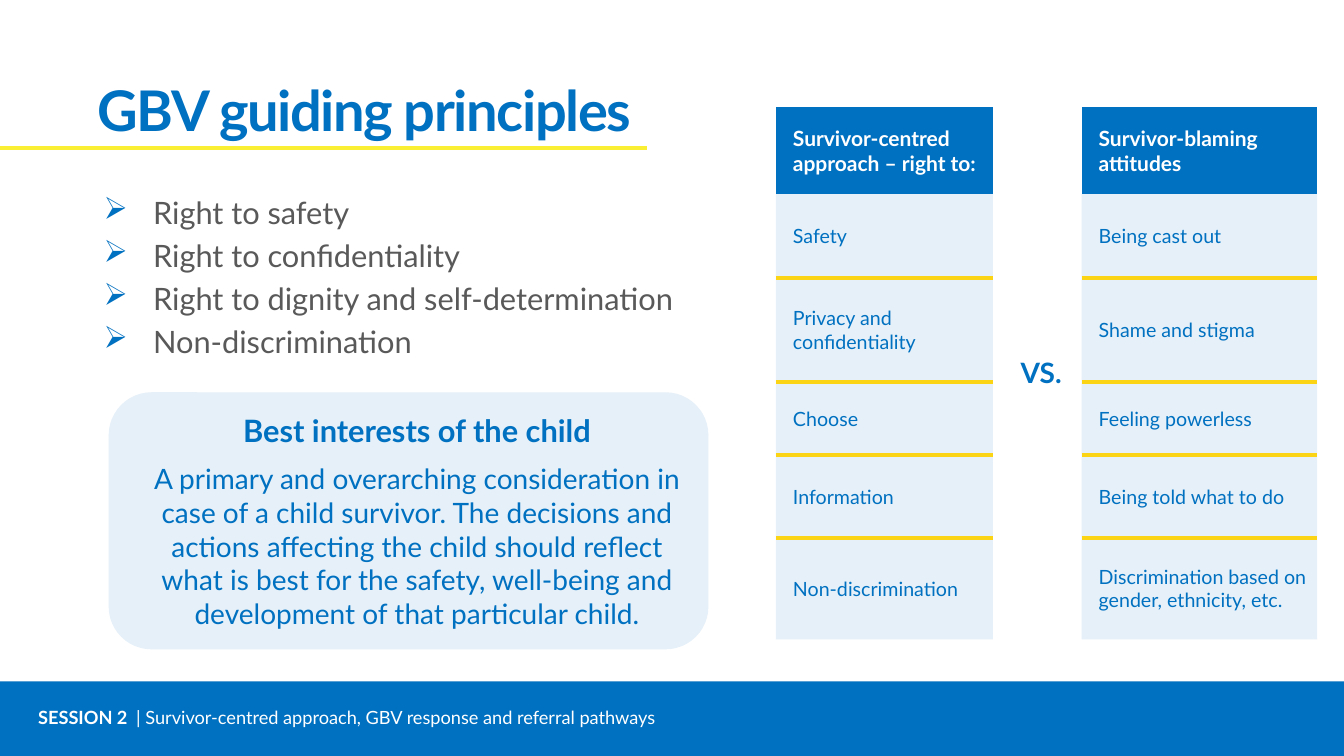
from dataclasses import dataclass
from typing import Any

from lxml.etree import SubElement
from pptx import Presentation
from pptx.dml.color import RGBColor as RGB
from pptx.enum.shapes import MSO_CONNECTOR as CONNECTOR, MSO_SHAPE as SHAPE
from pptx.enum.text import MSO_ANCHOR as ANCHOR, PP_ALIGN as ALIGN
from pptx.oxml.ns import qn
from pptx.util import Pt


@dataclass(frozen=True)
class Theme:
    font: str = "Lato"
    blue: str = "0070C0"
    grey: str = "595959"
    white: str = "FFFFFF"
    underline: str = "FBEF33"
    divider: str = "FBD416"
    tint: int = 10
    title: float = 40
    large: float = 22
    medium: float = 20
    header: float = 15
    cell: float = 14
    footer: float = 13


@dataclass(frozen=True)
class Box:
    left: float
    top: float
    width: float
    height: float

    def points(self) -> list[Pt]:
        return [Pt(v) for v in (self.left, self.top, self.width, self.height)]


@dataclass(frozen=True)
class Style:
    size: float
    color: str
    bold: bool = False


@dataclass(frozen=True)
class Contrast:
    right: str
    attitude: str
    height: float


THEME = Theme()
HEADER = Contrast("Survivor-centred approach – right to:", "Survivor-blaming attitudes", 62.4)
CONTRASTS = [
    Contrast("Safety", "Being cast out", 60),
    Contrast("Privacy and confidentiality", "Shame and stigma", 74),
    Contrast("Choose", "Feeling powerless", 52.6),
    Contrast("Information", "Being told what to do", 59),
    Contrast("Non-discrimination", "Discrimination based on gender, ethnicity, etc.", 72.4),
]
PRINCIPLES = [
    "Right to safety",
    "Right to confidentiality",
    "Right to dignity and self-determination",
    "Non-discrimination",
]
COLUMN_WIDTHS = [155, 63.4, 168.2]


def apply(target: Any, values: dict[str, Any]) -> None:
    for name, value in values.items():
        setattr(target, name, value)


def write(paragraph: Any, text: str, style: Style) -> Any:
    run = paragraph.add_run()
    run.text = text
    apply(run.font, {"name": THEME.font, "size": Pt(style.size), "bold": style.bold})
    run.font.color.rgb = RGB.from_string(style.color)
    return run


def paint(fill: Any, color: str) -> None:
    fill.solid()
    fill.fore_color.rgb = RGB.from_string(color)


def tint(properties: Any) -> None:
    color = properties.find(qn("a:solidFill")).find(qn("a:srgbClr"))
    SubElement(color, qn("a:alpha"), val=str(THEME.tint * 1000))


def add_panel(slide: Any, kind: SHAPE, box: Box) -> Any:
    panel = slide.shapes.add_shape(kind, *box.points())
    panel.shadow.inherit = False
    paint(panel.fill, THEME.blue)
    panel.line.fill.background()
    return panel


def add_title(slide: Any) -> None:
    title = slide.shapes.title
    left, top, width, height = Box(62.6, 54, 428.4, 51.8).points()
    apply(title, {"left": left, "top": top, "width": width, "height": height})
    apply(title.text_frame, {"vertical_anchor": ANCHOR.BOTTOM, "word_wrap": True})
    paragraph = title.text_frame.paragraphs[0]
    paragraph.alignment = ALIGN.LEFT
    run = write(paragraph, "GBV guiding principles", Style(THEME.title, THEME.blue, True))
    run.font._element.set("spc", "-100")

    underline = slide.shapes.add_connector(
        CONNECTOR.STRAIGHT, Pt(0), Pt(105.8), Pt(462.2), Pt(105.8))
    underline.line.color.rgb = RGB.from_string(THEME.underline)
    underline.line.width = Pt(3)
    SubElement(underline._element.spPr, qn("a:effectLst"))


def add_principles(slide: Any) -> None:
    frame = slide.shapes.add_textbox(*Box(67, 134.6, 428.4, 167).points()).text_frame
    frame.word_wrap = True
    for index, principle in enumerate(PRINCIPLES):
        paragraph = frame.add_paragraph() if index else frame.paragraphs[0]
        if index:
            paragraph.space_before = Pt(4.4)
        properties = paragraph._p.get_or_add_pPr()
        apply_indent = {"marL": Pt(35.3), "indent": -Pt(35.3)}
        for name, value in apply_indent.items():
            properties.set(name, str(int(value)))
        bullet_color = SubElement(properties, qn("a:buClr"))
        SubElement(bullet_color, qn("a:srgbClr"), val=THEME.blue)
        SubElement(properties, qn("a:buFont"), typeface="Wingdings 3")
        properties.remove(properties.find(qn("a:buFont")))
        SubElement(properties, qn("a:buChar"), char="➢")
        write(paragraph, principle, Style(THEME.large, THEME.grey))


def add_best_interests(slide: Any) -> None:
    panel = add_panel(slide, SHAPE.ROUNDED_RECTANGLE, Box(77.6, 280.2, 428.4, 183.6))
    tint(panel._element.spPr)
    frame = panel.text_frame
    apply(frame, {"word_wrap": True, "vertical_anchor": ANCHOR.MIDDLE})
    heading, explanation = frame.paragraphs[0], frame.add_paragraph()
    for paragraph in (heading, explanation):
        paragraph.alignment = ALIGN.CENTER
        paragraph._p.get_or_add_pPr().set("marL", str(int(Pt(12.2))))
    explanation.space_before = Pt(9.6)
    write(heading, "Best interests of the child", Style(THEME.large, THEME.blue, True))
    write(explanation,
          "A primary and overarching consideration in case of a child survivor. "
          "The decisions and actions affecting the child should reflect what is best for "
          "the safety, well-being and development of that particular child.",
          Style(THEME.medium, THEME.blue))


def fill_cell(cell: Any, text: str, style: Style, fill: str) -> None:
    apply(cell, {
        "vertical_anchor": ANCHOR.MIDDLE,
        "margin_left": Pt(12.2), "margin_right": Pt(6.5),
        "margin_top": Pt(3.6), "margin_bottom": Pt(3.6),
    })
    paint(cell.fill, fill)
    write(cell.text_frame.paragraphs[0], text, style)


def add_divider(cell: Any, side: str) -> None:
    properties = cell._tc.get_or_add_tcPr()
    line = SubElement(properties, qn(f"a:{side}"), w=str(int(Pt(3))))
    SubElement(SubElement(line, qn("a:solidFill")), qn("a:srgbClr"), val=THEME.divider)
    # Borders come before the fill, top before bottom
    properties.insert(len(properties.findall(qn("a:lnT"))) if side == "lnB" else 0, line)


def add_contrast_table(slide: Any) -> None:
    rows = [HEADER, *CONTRASTS]
    box = Box(554.2, 76.3, sum(COLUMN_WIDTHS), sum(row.height for row in rows))
    table = slide.shapes.add_table(len(rows), len(COLUMN_WIDTHS), *box.points()).table
    apply(table, {"first_row": False, "horz_banding": False})
    # Plain style without grid lines
    table._tbl.tblPr.find(qn("a:tableStyleId")).text = "{2D5ABB26-0587-4C30-8999-92F81FD0307C}"
    for column, width in zip(table.columns, COLUMN_WIDTHS):
        column.width = Pt(width)

    header_style = Style(THEME.header, THEME.white, True)
    cell_style = Style(THEME.cell, THEME.blue)
    for index, row in enumerate(rows):
        table.rows[index].height = Pt(row.height)
        for column, text in ((0, row.right), (2, row.attitude)):
            cell = table.cell(index, column)
            fill_cell(cell, text, cell_style if index else header_style, THEME.blue)
            if index:
                tint(cell._tc.tcPr)
            if index > 1:
                add_divider(cell, "lnT")
            if 0 < index < len(rows) - 1:
                add_divider(cell, "lnB")

    versus = table.cell(0, 1)
    versus.merge(table.cell(len(rows) - 1, 1))
    fill_cell(versus, "VS.", Style(THEME.medium, THEME.blue, True), THEME.white)
    versus.text_frame.paragraphs[0].alignment = ALIGN.CENTER


def add_footer(slide: Any) -> None:
    add_panel(slide, SHAPE.RECTANGLE, Box(0, 486.7, 960, 53.3))
    frame = slide.shapes.add_textbox(*Box(20.2, 501.1, 501.1, 23).points()).text_frame
    frame.word_wrap = True
    session = frame.paragraphs[0]
    write(session, "SESSION 2  ", Style(THEME.footer, THEME.white, True))
    write(session, "| Survivor-centred approach, GBV response and referral pathways",
          Style(THEME.footer, THEME.white))


def main() -> None:
    deck = Presentation()
    apply(deck, {"slide_width": Pt(960), "slide_height": Pt(540)})
    slide = deck.slides.add_slide(deck.slide_layouts[5])
    for add_part in (add_footer, add_principles, add_title, add_best_interests,
                     add_contrast_table):
        add_part(slide)
    deck.save("out.pptx")


if __name__ == "__main__":
    main()
